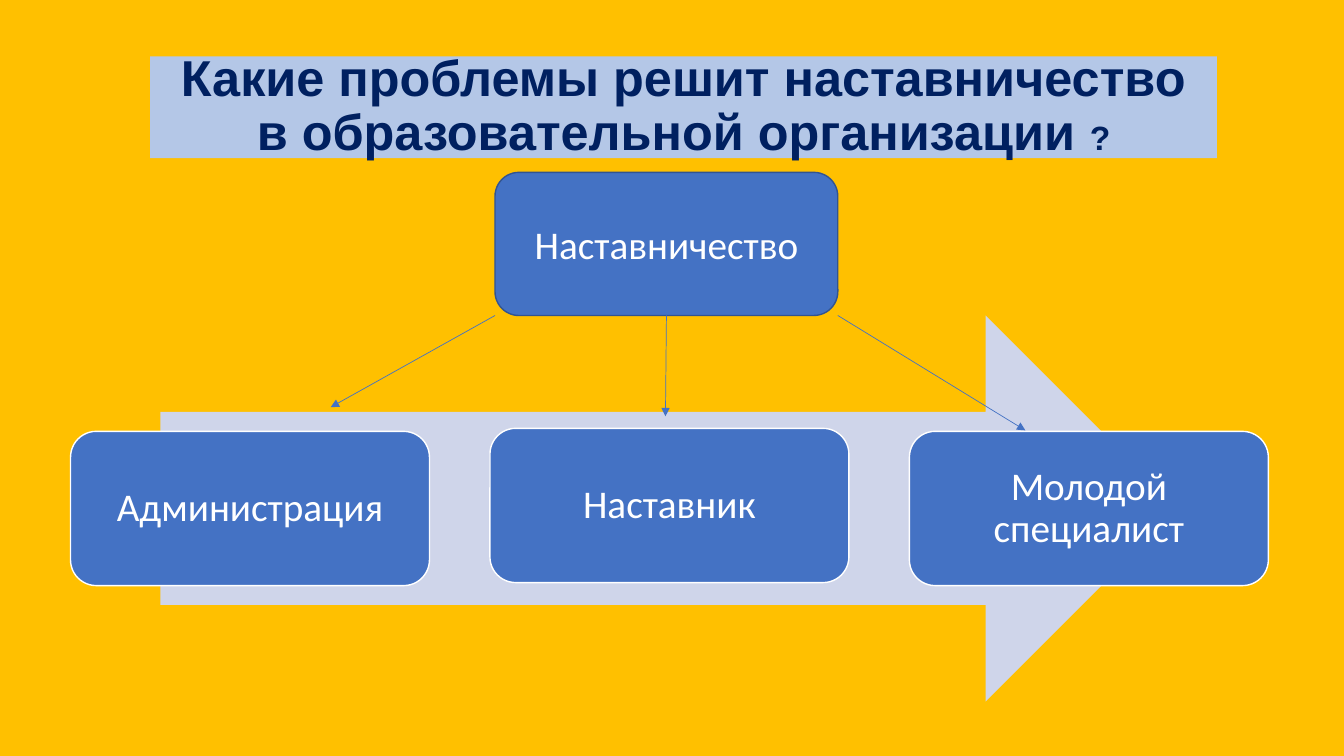
from lxml import etree
from pptx import Presentation
from pptx.dml.color import RGBColor
from pptx.enum.shapes import MSO_CONNECTOR, MSO_SHAPE
from pptx.enum.text import MSO_ANCHOR, PP_ALIGN
from pptx.oxml.ns import qn
from pptx.util import Pt

RECT, ROUNDED = MSO_SHAPE.RECTANGLE, MSO_SHAPE.ROUNDED_RECTANGLE
RIGHT_ARROW, STRAIGHT = MSO_SHAPE.RIGHT_ARROW, MSO_CONNECTOR.STRAIGHT
MIDDLE, CENTER = MSO_ANCHOR.MIDDLE, PP_ALIGN.CENTER
BOTTOM_SIDE = 2

# Content
TITLE = [("Какие проблемы решит наставничество в образовательной организации ", "title"),
         ("?", "mark")]
TOPIC = "Наставничество"
ROLES = [("Администрация", 428), ("Наставник", 425), ("Молодой специалист", 428)]  # text, top

# Layout in px, 100 to the inch
PX = 9144
SLIDE = (1333, 750)
TITLE_BOX = (149, 56, 1058, 101)
TOPIC_BOX = (491, 171, 340, 142)
ARROW_BOX = (159, 313, 1010, 383)
ROLE_LEFT, ROLE_STEP, ROLE_SIZE = 70, 416, (356, 153)
POINTER_ENDS = [(328, 404), (660, 413), (1017, 427)]


class Theme:
    background, band, arrow = "FFC000", "B4C7E7", "CFD5EA"
    box, box_edge, white = "4472C4", "325491", "FFFFFF"
    edge_width, pointer_width = 1, 0.5
    fonts = {
        "title": {"name": "Arial", "size": Pt(36), "bold": True, "color": "002060"},
        "mark": {"name": "Arial", "size": Pt(24), "bold": True, "color": "002060"},
        "label": {"name": "Calibri", "size": Pt(28), "bold": False, "color": "FFFFFF"},
    }


def emu(lengths):
    return [length * PX for length in lengths]


def paint(fill, color):
    fill.solid()
    fill.fore_color.rgb = RGBColor.from_string(color)


def add_block(page, kind, place, color, edge=None):
    block = page.shapes.add_shape(kind, *emu(place))
    block.shadow.inherit = False
    paint(block.fill, color)
    if edge:
        paint(block.line.fill, edge)
        block.line.width = Pt(Theme.edge_width)
    else:
        block.line.fill.background()
    return block


def write(block, spans, spacing=1.0, margin=None):
    frame = block.text_frame
    settings = {"word_wrap": True, "vertical_anchor": MIDDLE}
    if margin is not None:
        for side in ("left", "top", "right", "bottom"):
            settings[f"margin_{side}"] = margin * PX
    for name, value in settings.items():
        setattr(frame, name, value)
    para = frame.paragraphs[0]
    para.alignment, para.line_spacing = CENTER, spacing
    for text, style in spans:
        span = para.add_run()
        span.text = text
        for name, value in Theme.fonts[style].items():
            if name == "color":
                span.font.color.rgb = RGBColor.from_string(value)
            else:
                setattr(span.font, name, value)


def add_pointer(page, start, end):
    pointer = page.shapes.add_connector(STRAIGHT, *emu(start + end))
    paint(pointer.line.fill, Theme.box)
    pointer.line.width = Pt(Theme.pointer_width)
    outline = pointer.line._get_or_add_ln()
    etree.SubElement(outline, qn("a:tailEnd"), type="triangle")
    etree.SubElement(pointer._element.spPr, qn("a:effectLst"))
    return pointer


def main():
    deck = Presentation()
    deck.slide_width, deck.slide_height = emu(SLIDE)
    page = deck.slides.add_slide(deck.slide_layouts[6])
    paint(page.background.fill, Theme.background)

    # Title band and topic
    write(add_block(page, RECT, TITLE_BOX, Theme.band), TITLE, 0.9)
    topic = add_block(page, ROUNDED, TOPIC_BOX, Theme.box, Theme.box_edge)
    write(topic, [(TOPIC, "label")])

    # Roles along the wide arrow
    add_block(page, RIGHT_ARROW, ARROW_BOX, Theme.arrow)
    for index, (role, top) in enumerate(ROLES):
        place = (ROLE_LEFT + index * ROLE_STEP, top, *ROLE_SIZE)
        box = add_block(page, ROUNDED, place, Theme.box, Theme.white)
        write(box, [(role, "label")], 0.9, 12)

    # Pointers from the topic's lower corners and middle
    left, top, width, height = TOPIC_BOX
    for index, end in enumerate(POINTER_ENDS):
        start = (left + index * width // 2, top + height)
        pointer = add_pointer(page, start, end)
        if index == 1:
            pointer.begin_connect(topic, BOTTOM_SIDE)

    deck.save("out.pptx")


if __name__ == "__main__":
    main()
